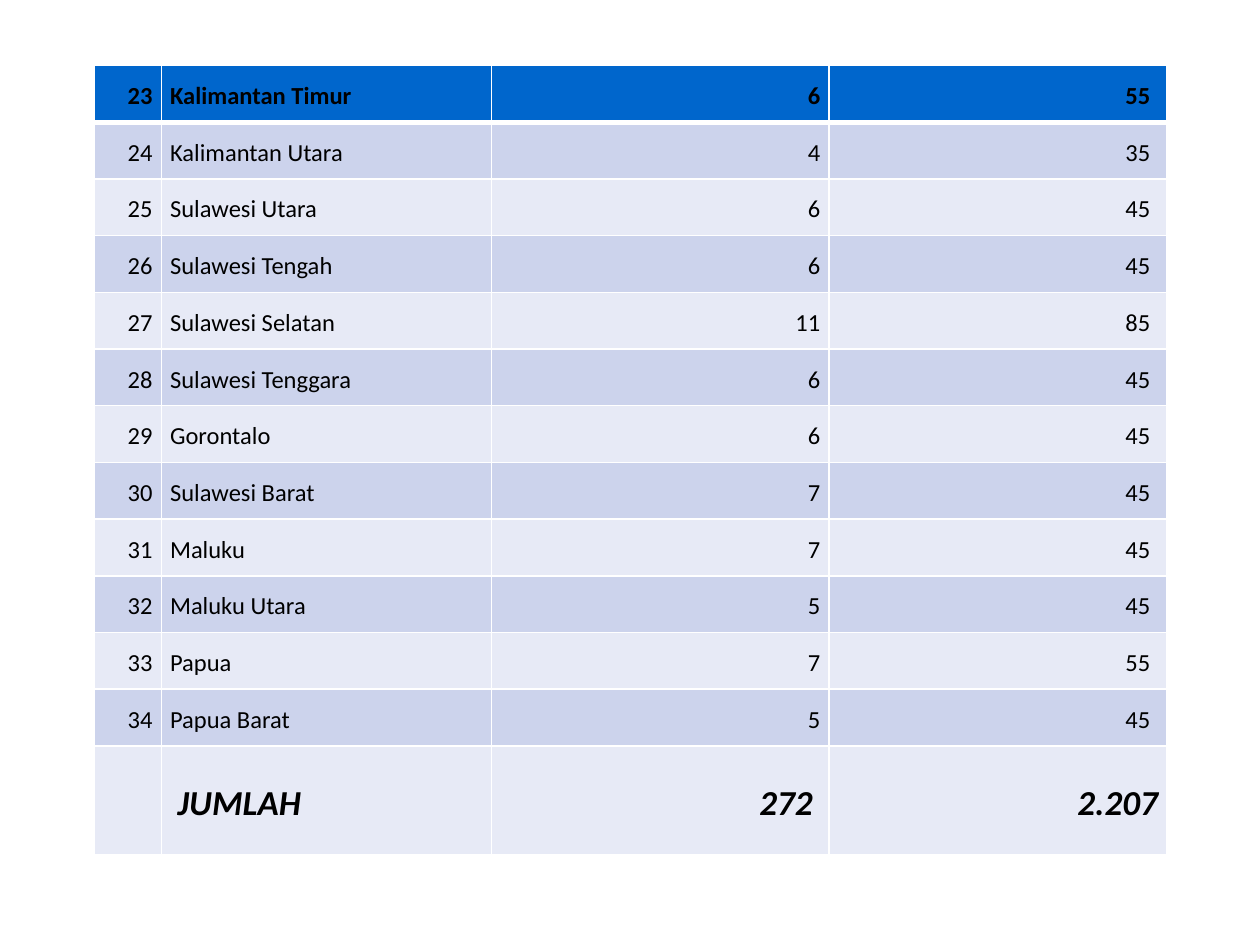
from lxml import etree
from pptx import Presentation
from pptx.dml.color import RGBColor
from pptx.enum.text import MSO_ANCHOR, PP_ALIGN
from pptx.oxml.ns import qn
from pptx.util import Inches, Pt

LEFT, RIGHT, MIDDLE = PP_ALIGN.LEFT, PP_ALIGN.RIGHT, MSO_ANCHOR.MIDDLE
BLUE, DARK, LIGHT, WHITE, BLACK = "0066CC", "CCD3EC", "E7EAF6", "FFFFFF", "000000"
AREAS = [
    ("Kalimantan Timur", 6, 55),
    ("Kalimantan Utara", 4, 35),
    ("Sulawesi Utara", 6, 45),
    ("Sulawesi Tengah", 6, 45),
    ("Sulawesi Selatan", 11, 85),
    ("Sulawesi Tenggara", 6, 45),
    ("Gorontalo", 6, 45),
    ("Sulawesi Barat", 7, 45),
    ("Maluku", 7, 45),
    ("Maluku Utara", 5, 45),
    ("Papua", 7, 55),
    ("Papua Barat", 5, 45),
]
FIRST = 23
TOTAL = ("", "JUMLAH", "272", "2.207")
COLS = (0.53, 2.62, 2.68, 2.68)
ALIGNS = (RIGHT, LEFT, RIGHT, RIGHT)
PAD, WIDE = 0.07, 0.13
ROW, LAST = 0.45, 0.86


def rgb(code):
    return RGBColor.from_string(code)


def border(cell, top, bottom):
    props = cell._tc.get_or_add_tcPr()
    for side, width in zip("LRTB", (1, 1, top, bottom)):
        line = etree.SubElement(props, qn(f"a:ln{side}"), w=str(Pt(width)))
        fill = etree.SubElement(line, qn("a:solidFill"))
        etree.SubElement(fill, qn("a:srgbClr"), val=WHITE)


def write(cell, text, align=LEFT, size=14, bold=False, italic=False, left=PAD, right=PAD):
    cell.vertical_anchor = MIDDLE
    cell.margin_left, cell.margin_right = Inches(left), Inches(right)
    cell.margin_top = cell.margin_bottom = 0
    para = cell.text_frame.paragraphs[0]
    para.alignment, para.line_spacing = align, 1.15
    if text:
        run = para.add_run()
        run.text = text
        font = run.font
        font.name, font.size = "Calibri", Pt(size)
        font.bold, font.italic = bold, italic
        font.color.rgb = rgb(BLACK)


def main():
    """Build the slide with the table of provinces and their total."""
    deck = Presentation()
    deck.slide_width, deck.slide_height = Inches(10), Inches(7.5)
    slide = deck.slides.add_slide(deck.slide_layouts[6])
    rows = [(str(FIRST + i), *map(str, area)) for i, area in enumerate(AREAS)] + [TOTAL]
    end = len(rows) - 1
    high = ROW * end + LAST
    frame = slide.shapes.add_table(len(rows), len(COLS), Inches(0.75), Inches(0.52),
                                   Inches(sum(COLS)), Inches(high))
    table = frame.table
    table.horz_banding = False
    for col, width in zip(table.columns, COLS):
        col.width = Inches(width)
    for r, row in enumerate(rows):
        head, total = r == 0, r == end
        table.rows[r].height = Inches(LAST if total else ROW)
        tint = BLUE if head else DARK if r % 2 else LIGHT
        for c, text in enumerate(row):
            cell = table.cell(r, c)
            border(cell, top=3 if r == 1 else 1, bottom=3 if head else 1)
            cell.fill.solid()
            cell.fill.fore_color.rgb = rgb(tint)
            write(cell, text, align=ALIGNS[c], size=20 if total else 14,
                  bold=head or total, italic=total,
                  left=WIDE if total and c == 1 else PAD,
                  right=WIDE if c == (2 if total else 3) else PAD)
    deck.save("out.pptx")


if __name__ == "__main__":
    main()
